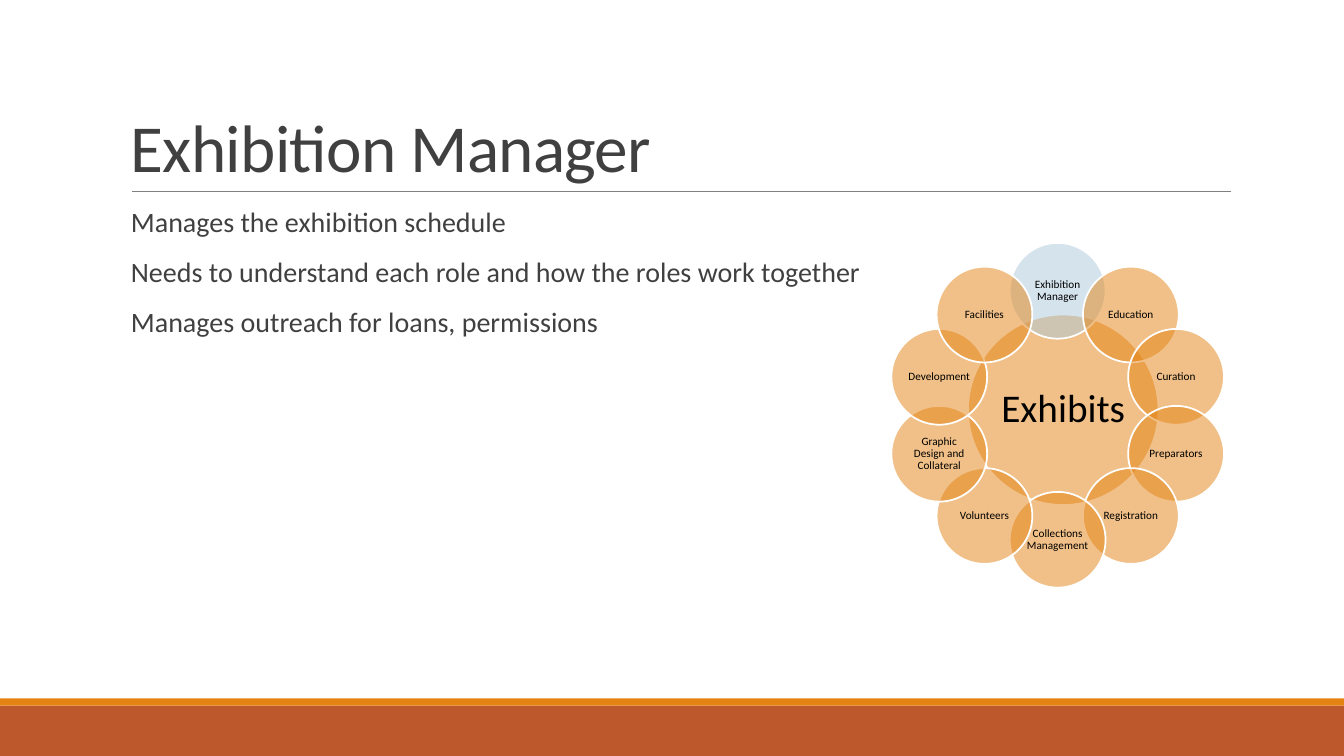
import math
from pptx import Presentation, util as u
from pptx.dml.color import RGBColor
from pptx.enum import shapes, text
from pptx.oxml.ns import qn
from lxml import etree

ORANGE, RUST, BLUE = "E48312", "BD582C", "ADC8DD"


def paint(fill, color, alpha=None):
    fill.solid()
    fill.fore_color.rgb = RGBColor.from_string(color)
    if alpha is not None:
        rgb = fill._xPr.find(qn("a:solidFill"))[0]
        etree.SubElement(rgb, qn("a:alpha")).set("val", str(alpha * 1000))


def write(shape, lines, size, color, anchor=text.MSO_ANCHOR.TOP, align=text.PP_ALIGN.LEFT,
          spacing=0.9, before=0, after=0, tracking=None, inset_x=0.1, inset_y=0.05):
    frame = shape.text_frame
    frame.word_wrap = True
    frame.vertical_anchor = anchor
    frame.margin_left = frame.margin_right = u.Inches(inset_x)
    frame.margin_top = frame.margin_bottom = u.Inches(inset_y)
    for i, line in enumerate(lines):
        paragraph = frame.add_paragraph() if i else frame.paragraphs[0]
        paragraph.alignment = align
        paragraph.line_spacing = spacing
        paragraph.space_before = u.Pt(before if i else 0)
        paragraph.space_after = u.Pt(after)
        run = paragraph.add_run()
        run.text = line
        run.font.name = "Calibri"
        run.font.size = u.Pt(size)
        paint(run.font.fill, color)
        if tracking is not None:
            run.font._element.set("spc", str(int(tracking * 100)))


deck = Presentation()
deck.slide_width, deck.slide_height = u.Inches(13.33), u.Inches(7.5)
slide = deck.slides.add_slide(deck.slide_layouts[6])

for top, height, color in [(7, 0.5, RUST), (6.93, 0.07, ORANGE)]:
    band = slide.shapes.add_shape(shapes.MSO_SHAPE.RECTANGLE, 0, u.Inches(top),
                                  deck.slide_width, u.Inches(height))
    band.shadow.inherit = False
    paint(band.fill, color)
    band.line.fill.background()

rule = slide.shapes.add_connector(shapes.MSO_CONNECTOR.STRAIGHT, u.Inches(1.31), u.Inches(1.9),
                                  u.Inches(12.21), u.Inches(1.9))
paint(rule.line.fill, "808080")
rule.line.width = u.Pt(0.5)
etree.SubElement(rule._element.spPr, qn("a:effectLst"))

title = slide.shapes.add_textbox(u.Inches(1.2), u.Inches(0.31), u.Inches(11), u.Inches(1.59))
write(title, ["Exhibition Manager"], 48, "404040", anchor=text.MSO_ANCHOR.BOTTOM,
      spacing=0.85, tracking=-0.5)

duties = slide.shapes.add_textbox(u.Inches(1.2), u.Inches(2.02), u.Inches(11), u.Inches(4.4))
write(duties, ["Manages the exhibition schedule",
               "Needs to understand each role and how the roles work together",
               "Manages outreach for loans, permissions"], 20, "404040", before=12, after=2)

roles = ["Exhibition Manager", "Education", "Curation", "Preparators", "Registration",
         "Collections Management", "Volunteers", "Graphic Design and Collateral",
         "Development", "Facilities"]
ring_x, ring_y, ring_radius = 10.49, 4.12, 1.235
circles = [("Exhibits", 10.545, 4.065, 1.89, ORANGE, 28, 0.04)]
for i, role in enumerate(roles):
    angle = 2 * math.pi * i / len(roles)
    circles.append((role, ring_x + ring_radius * math.sin(angle),
                    ring_y - ring_radius * math.cos(angle),
                    0.95, ORANGE if i else BLUE, 8, 0.01))

for label, x, y, diameter, color, size, inset in circles:
    circle = slide.shapes.add_shape(shapes.MSO_SHAPE.OVAL, u.Inches(x - diameter / 2),
                                    u.Inches(y - diameter / 2),
                                    u.Inches(diameter), u.Inches(diameter))
    circle.shadow.inherit = False
    paint(circle.fill, color, alpha=50)
    paint(circle.line.fill, "FFFFFF")
    circle.line.width = u.Pt(1.25)
    write(circle, [label], size, "000000", anchor=text.MSO_ANCHOR.MIDDLE,
          align=text.PP_ALIGN.CENTER, inset_x=inset, inset_y=inset)

deck.save("out.pptx")
